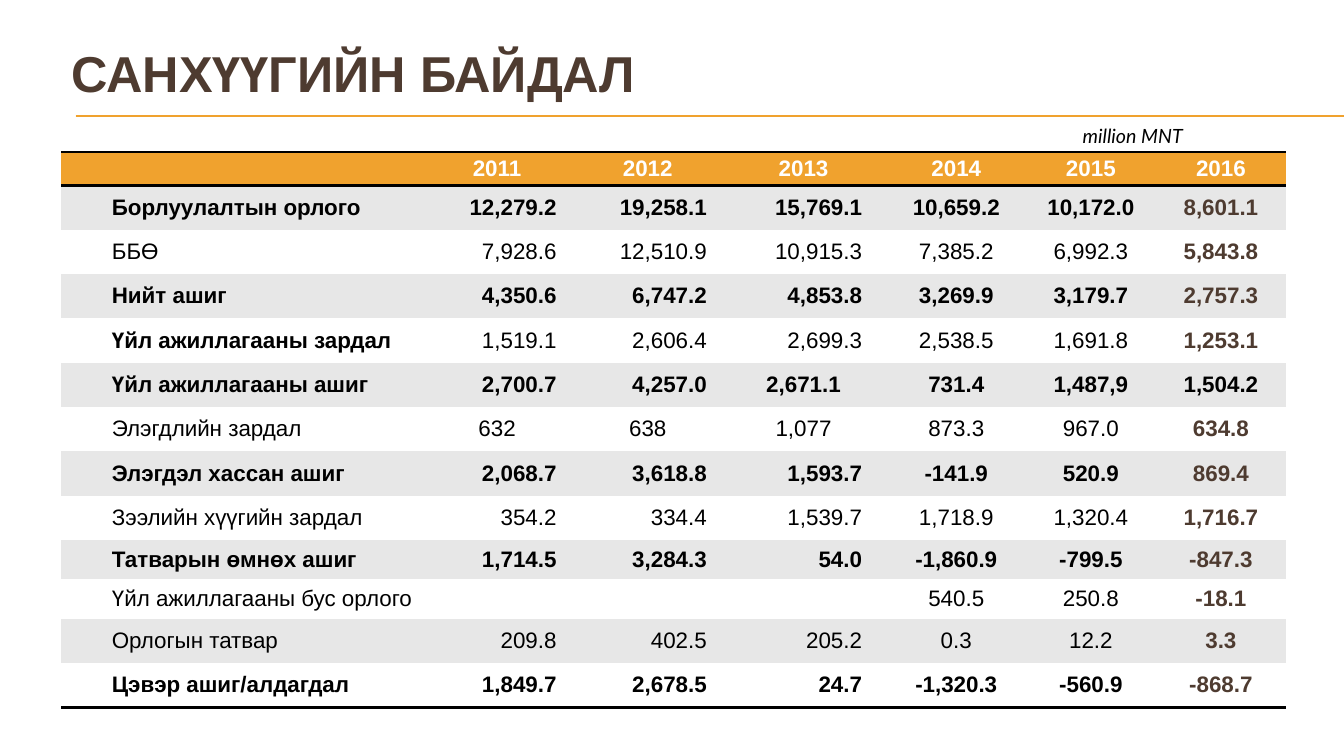
from dataclasses import dataclass

from lxml.etree import SubElement
from pptx import Presentation
from pptx.dml.color import RGBColor
from pptx.enum.shapes import MSO_CONNECTOR as Connector
from pptx.enum.text import MSO_ANCHOR as Anchor, PP_ALIGN as Align
from pptx.oxml.ns import qn
from pptx.util import Inches, Pt

COLORS = {
    "brown": "4E3B30",
    "orange": "F0A22E",
    "band": "E7E7E7",
    "white": "FFFFFF",
    "black": "000000",
}
NO_GRID_STYLE = "{2D5ABB26-0587-4C30-8999-92F81FD0307C}"
COLUMN_WIDTHS = [3.55, 1.54, 1.45, 1.64, 1.39, 1.28, 1.3]
RIGHT_MARGINS = {1: 0.18, 2: 0.14, 3: 0.24}
YEARS = ["2011", "2012", "2013", "2014", "2015", "2016"]
HEADER_HEIGHT = 0.33
LABEL_INDENT = 0.5
LAST_COLUMN = len(YEARS)


@dataclass(frozen=True)
class TextStyle:
    size: int
    color: str = "black"
    bold: bool = False
    italic: bool = False
    font: str = "Arial"
    align: Align = Align.LEFT


@dataclass(frozen=True)
class FinanceRow:
    label: str
    values: list[str]
    label_bold: bool = False
    values_bold: bool = False
    height: float = 0.44
    last_color: str = "brown"
    centered: tuple[int, ...] = ()


@dataclass(frozen=True)
class TextBox:
    text: str
    left: float
    top: float
    width: float
    height: float
    style: TextStyle
    anchor: Anchor = Anchor.TOP


ROWS = [
    FinanceRow("Борлуулалтын орлого",
               ["12,279.2", "19,258.1", "15,769.1", "10,659.2", "10,172.0", "8,601.1"], True, True),
    FinanceRow("ББӨ", ["7,928.6", "12,510.9", "10,915.3", "7,385.2", "6,992.3", "5,843.8"]),
    FinanceRow("Нийт ашиг",
               ["4,350.6", "6,747.2", "4,853.8", "3,269.9", "3,179.7", "2,757.3"], True, True),
    FinanceRow("Үйл ажиллагааны зардал",
               ["1,519.1", "2,606.4", "2,699.3", "2,538.5", "1,691.8", "1,253.1"], True),
    FinanceRow("Үйл ажиллагааны ашиг",
               ["2,700.7", "4,257.0", "2,671.1", "731.4", "1,487,9", "1,504.2"], True, True,
               last_color="black", centered=(3,)),
    FinanceRow("Элэгдлийн зардал", ["632", "638", "1,077", "873.3", "967.0", "634.8"],
               centered=(1, 2, 3)),
    FinanceRow("Элэгдэл хассан ашиг",
               ["2,068.7", "3,618.8", "1,593.7", "-141.9", "520.9", "869.4"], True, True),
    FinanceRow("Зээлийн хүүгийн зардал",
               ["354.2", "334.4", "1,539.7", "1,718.9", "1,320.4", "1,716.7"]),
    FinanceRow("Татварын өмнөх ашиг",
               ["1,714.5", "3,284.3", "54.0", "-1,860.9", "-799.5", "-847.3"], True, True, 0.39),
    FinanceRow("Үйл ажиллагааны бус орлого", ["", "", "", "540.5", "250.8", "-18.1"], height=0.39),
    FinanceRow("Орлогын татвар", ["209.8", "402.5", "205.2", "0.3", "12.2", "3.3"]),
    FinanceRow("Цэвэр ашиг/алдагдал",
               ["1,849.7", "2,678.5", "24.7", "-1,320.3", "-560.9", "-868.7"], True, True),
]

TEXT_BOXES = [
    TextBox("САНХҮҮГИЙН БАЙДАЛ", 0.61, 0.14, 6.54, 1.15,
            TextStyle(36, "brown", bold=True), Anchor.MIDDLE),
    TextBox("million MNT", 10.44, 1.18, 1.39, 0.34,
            TextStyle(14, italic=True, font="Lato", align=Align.RIGHT)),
]


def rgb(name: str) -> RGBColor:
    return RGBColor.from_string(COLORS[name])


def write(frame, text: str, style: TextStyle) -> None:
    para = frame.paragraphs[0]
    para.text = text
    para.alignment = style.align
    font = para.font
    font.name = style.font
    font.size = Pt(style.size)
    font.bold = style.bold
    font.italic = style.italic
    font.color.rgb = rgb(style.color)


def add_text_box(slide, item: TextBox) -> None:
    box = slide.shapes.add_textbox(
        Inches(item.left), Inches(item.top), Inches(item.width), Inches(item.height))
    frame = box.text_frame
    frame.word_wrap = True
    frame.vertical_anchor = item.anchor
    write(frame, item.text, item.style)


def add_rule(slide, top: float) -> None:
    rule = slide.shapes.add_connector(
        Connector.STRAIGHT, Inches(0.75), Inches(top), Inches(13.33), Inches(top))
    rule.line.color.rgb = rgb("orange")
    rule.line.width = Pt(0.75)
    SubElement(rule._element.spPr, qn("a:effectLst"))


def add_border(cell, side: str) -> None:
    line = SubElement(cell._tc.get_or_add_tcPr(), qn(f"a:ln{side}"), w=str(Pt(2)))
    fill = SubElement(line, qn("a:solidFill"))
    SubElement(fill, qn("a:srgbClr"), val=COLORS["black"])


def fill_cell(cell, text: str, style: TextStyle, background: str, borders: str = "",
              left: float = 0, right: float = 0) -> None:
    cell.margin_top = cell.margin_bottom = 0
    cell.margin_left, cell.margin_right = Inches(left), Inches(right)
    cell.vertical_anchor = Anchor.MIDDLE
    for side in borders:
        add_border(cell, side)
    cell.fill.solid()
    cell.fill.fore_color.rgb = rgb(background)
    write(cell.text_frame, text, style)


def fill_row(table, index: int, row: FinanceRow) -> None:
    background = "band" if index % 2 else "white"
    borders = "B" if index == len(ROWS) else ""
    fill_cell(table.cell(index, 0), row.label, TextStyle(16, bold=row.label_bold),
              background, borders, left=LABEL_INDENT)
    for column, value in enumerate(row.values, 1):
        last = column == LAST_COLUMN
        right = 0 if column in row.centered else RIGHT_MARGINS.get(column, 0)
        style = TextStyle(16, row.last_color if last else "black",
                          bold=last or row.values_bold,
                          align=Align.RIGHT if right else Align.CENTER)
        fill_cell(table.cell(index, column), value, style, background, borders, right=right)


def add_finance_table(slide) -> None:
    heights = [HEADER_HEIGHT] + [row.height for row in ROWS]
    table = slide.shapes.add_table(
        len(heights), len(COLUMN_WIDTHS), Inches(0.61), Inches(1.51),
        Inches(sum(COLUMN_WIDTHS)), Inches(sum(heights))).table
    table.first_row = table.horz_banding = False
    table._tbl.tblPr.find(qn("a:tableStyleId")).text = NO_GRID_STYLE
    for column, width in zip(table.columns, COLUMN_WIDTHS):
        column.width = Inches(width)
    for table_row, height in zip(table.rows, heights):
        table_row.height = Inches(height)
    header_style = TextStyle(16, "white", bold=True, align=Align.CENTER)
    for column, year in enumerate(["", *YEARS]):
        fill_cell(table.cell(0, column), year, header_style, "orange", "TB")
    for index, row in enumerate(ROWS, 1):
        fill_row(table, index, row)


def main() -> None:
    deck = Presentation()
    deck.slide_width, deck.slide_height = Inches(13.33), Inches(7.5)
    slide = deck.slides.add_slide(deck.slide_layouts[6])
    for top in (1.15, 1.16):
        add_rule(slide, top)
    add_finance_table(slide)
    for item in TEXT_BOXES:
        add_text_box(slide, item)
    deck.save("out.pptx")


if __name__ == "__main__":
    main()
